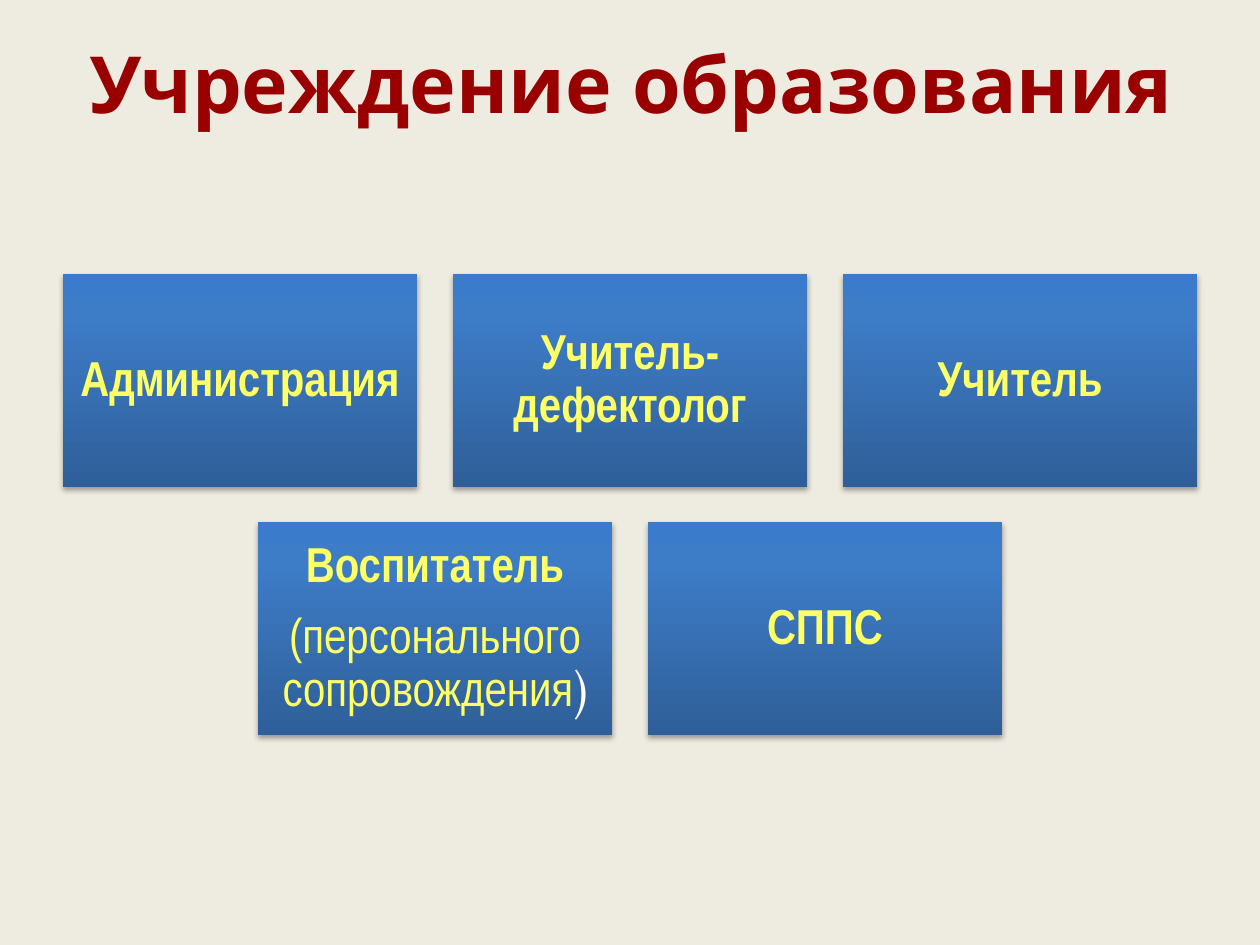
from copy import deepcopy
from dataclasses import dataclass

from lxml import etree
from pptx import Presentation
from pptx.dml.color import RGBColor
from pptx.enum.shapes import MSO_SHAPE
from pptx.enum.text import MSO_ANCHOR, MSO_AUTO_SIZE, PP_ALIGN
from pptx.oxml.ns import qn
from pptx.util import Pt

RECTANGLE = MSO_SHAPE.RECTANGLE
MIDDLE = MSO_ANCHOR.MIDDLE
NO_AUTOFIT = MSO_AUTO_SIZE.NONE
CENTER = PP_ALIGN.CENTER

EMU_PER_PX = 914400 / 126
SLIDE_WIDTH, SLIDE_HEIGHT = 1260, 945
CARD_WIDTH, CARD_HEIGHT = 354, 213
COLUMN_GAP, ROW_GAP = 36, 35
FIRST_ROW_TOP = 274
CARD_INSET = 15


@dataclass(frozen=True)
class Theme:
    """Colours, fonts and type sizes of the slide."""

    background: str = "EEECE1"
    heading: str = "990000"
    label: str = "FFFF66"
    bracket: str = "FFFFFF"
    gradient: tuple = ((0, "2F5F99"), (0.8, "3D7CC7"), (1, "3A7CCB"))
    shadow: str = "000000"
    heading_font: str = "Noto Sans"
    label_font: str = "Arial Narrow"
    bracket_font: str = "Vollkorn"
    heading_size: int = 45
    label_size: int = 28


def px(length):
    """Turn pixels into EMU."""
    return round(length * EMU_PER_PX)


def add_text(paragraph, text, *, font, size, color, bold=False):
    """Add a formatted run to a centred paragraph."""
    paragraph.alignment = CENTER
    run = paragraph.add_run()
    run.text = text
    run.font.name = font
    run.font.size = Pt(size)
    run.font.bold = bold
    run.font.color.rgb = RGBColor.from_string(color)


class SlideBuilder:
    """Holds the theme and the slide being built."""

    def __init__(self, slide, theme):
        """Start a slide on the theme background."""
        self.slide = slide
        self.theme = theme
        slide.background.fill.solid()
        slide.background.fill.fore_color.rgb = RGBColor.from_string(theme.background)

    def title(self, text, left, top, width, height):
        """Place and format the title placeholder."""
        heading = self.slide.shapes.title
        heading.left, heading.top = px(left), px(top)
        heading.width, heading.height = px(width), px(height)
        frame = heading.text_frame
        frame.auto_size = NO_AUTOFIT
        frame.vertical_anchor = MIDDLE
        add_text(frame.paragraphs[0], text, font=self.theme.heading_font,
                 size=self.theme.heading_size, color=self.theme.heading, bold=True)

    def gradient(self, shape):
        """Fill a shape with the vertical theme gradient."""
        fill = shape.fill
        fill.gradient()
        fill.gradient_angle = 90
        stop_list = shape.element.spPr.find(qn("a:gradFill")).find(qn("a:gsLst"))
        stop_list.append(deepcopy(stop_list[-1]))
        for stop, (position, color) in zip(fill.gradient_stops, self.theme.gradient):
            stop.position = position
            stop.color.rgb = RGBColor.from_string(color)

    def shadow(self, shape):
        """Give a shape a soft shadow below."""
        shape.shadow.inherit = False
        effects = shape.element.spPr.find(qn("a:effectLst"))
        outer = etree.SubElement(effects, qn("a:outerShdw"), blurRad=str(Pt(3.1)),
                                 dist=str(Pt(1.8)), dir="5400000", rotWithShape="0")
        color = etree.SubElement(outer, qn("a:srgbClr"), val=self.theme.shadow)
        etree.SubElement(color, qn("a:alpha"), val="35000")

    def card(self, paragraphs, left, top):
        """Add a card whose paragraphs are lists of text and format pairs."""
        card = self.slide.shapes.add_shape(
            RECTANGLE, px(left), px(top), px(CARD_WIDTH), px(CARD_HEIGHT))
        self.gradient(card)
        card.line.fill.background()
        self.shadow(card)
        frame = card.text_frame
        frame.word_wrap = True
        frame.vertical_anchor = MIDDLE
        frame.margin_left = frame.margin_right = px(CARD_INSET)
        frame.margin_top = frame.margin_bottom = px(CARD_INSET)
        label_style = {"font": self.theme.label_font, "size": self.theme.label_size,
                       "color": self.theme.label}
        for index, runs in enumerate(paragraphs):
            paragraph = frame.add_paragraph() if index else frame.paragraphs[0]
            paragraph.line_spacing = 0.9
            paragraph.space_after = Pt(10)
            for text, changes in runs:
                add_text(paragraph, text, **{**label_style, **changes})

    def card_row(self, cards, top):
        """Add a row of cards centred on the slide."""
        step = CARD_WIDTH + COLUMN_GAP
        first_left = (SLIDE_WIDTH - len(cards) * step + COLUMN_GAP) // 2
        for column, paragraphs in enumerate(cards):
            self.card(paragraphs, first_left + column * step, top)


def main():
    """Build and save the slide."""
    theme = Theme()
    deck = Presentation()
    deck.slide_width, deck.slide_height = px(SLIDE_WIDTH), px(SLIDE_HEIGHT)
    builder = SlideBuilder(deck.slides.add_slide(deck.slide_layouts[5]), theme)
    builder.title("Учреждение образования", 64, 4, 1134, 157)

    bold = {"bold": True}
    bracket = {"font": theme.bracket_font, "color": theme.bracket}
    staff_rows = [
        [[[("Администрация", bold)]],
         [[("Учитель-дефектолог", bold)]],
         [[("Учитель", bold)]]],
        [[[("Воспитатель", bold)],
          [("(персонального сопровождения", {}), (")", bracket)]],
         [[("СППС", bold)]]],
    ]
    for row, cards in enumerate(staff_rows):
        builder.card_row(cards, FIRST_ROW_TOP + row * (CARD_HEIGHT + ROW_GAP))
    deck.save("out.pptx")


if __name__ == "__main__":
    main()
